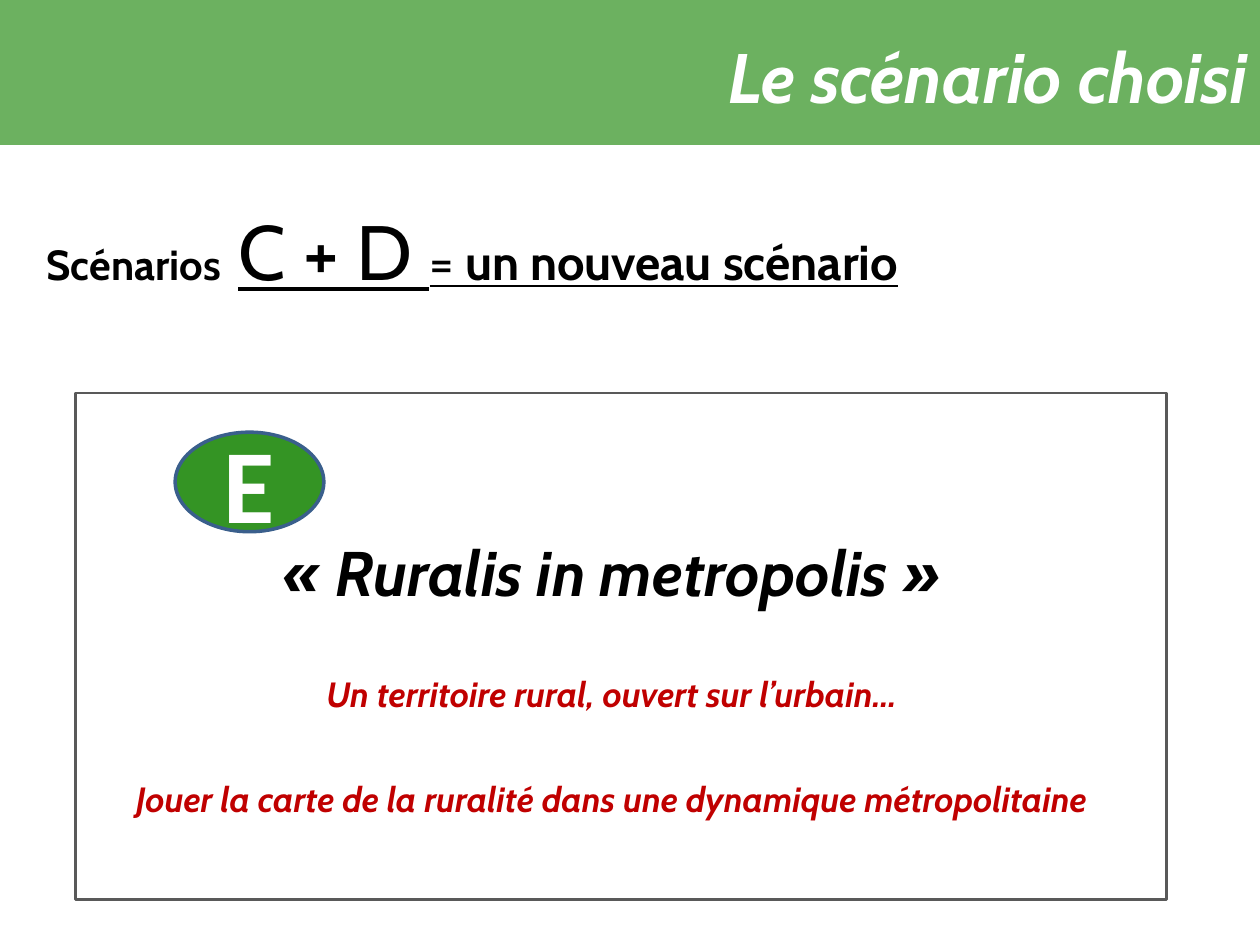
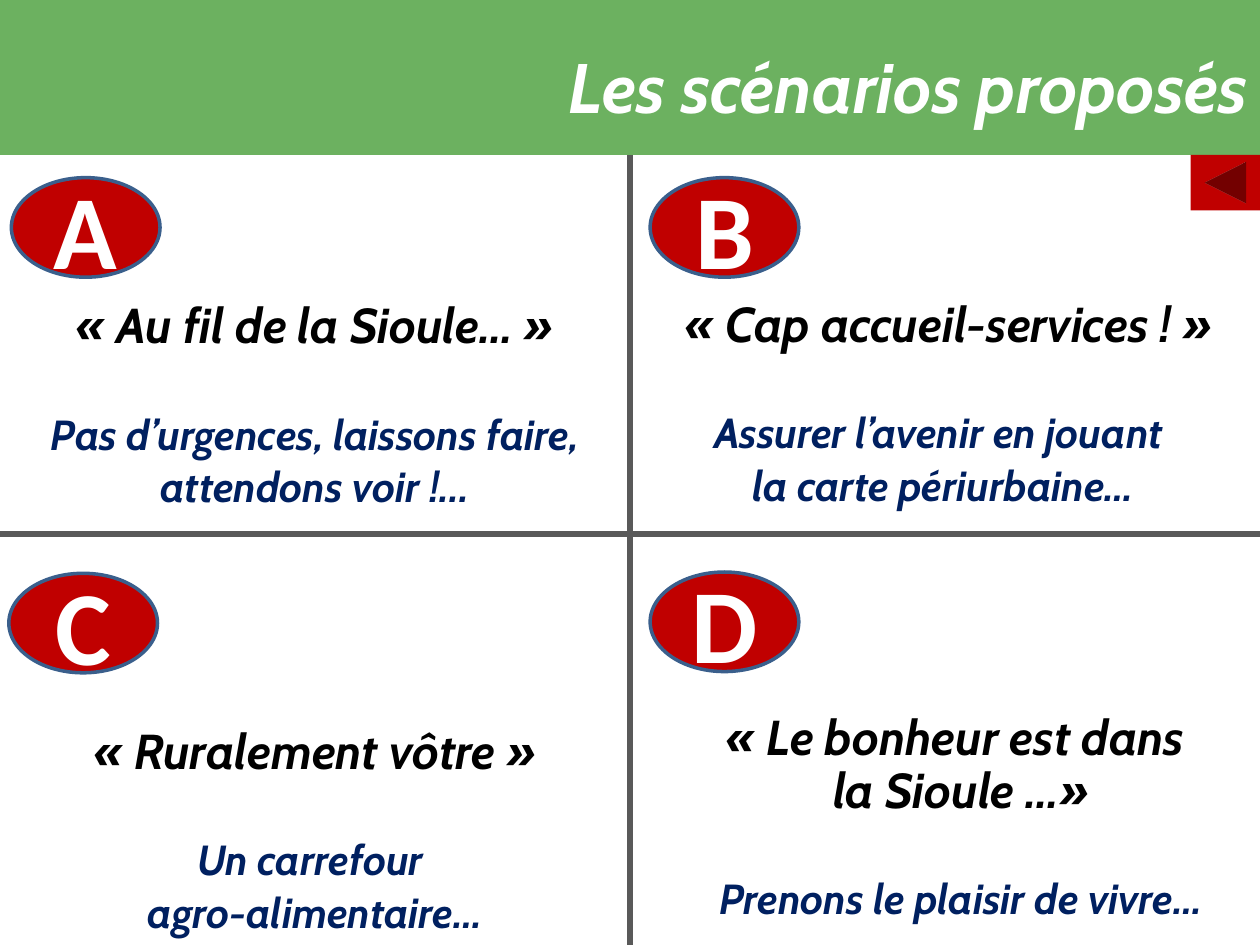
from dataclasses import dataclass
from typing import NamedTuple

from lxml import etree
from pptx import Presentation
from pptx import util as u
from pptx.dml.color import RGBColor
from pptx.enum import shapes, text
from pptx.oxml.ns import qn

COLOURS = {
    "green": "349424",
    "red": "C00000",
    "navy": "002060",
    "rim": "3A5F8C",
    "grey": "595959",
    "black": "000000",
    "white": "FFFFFF",
}
COLUMNS, ROWS = 100, 75
CELL = u.Inches(0.1)
BODY_LEADING = 30
BADGE_COLUMNS, BADGE_ROWS = 11.8, 7.9


class Area(NamedTuple):
    """A place on the grid, in columns and rows."""
    column: float
    row: float
    columns: float
    rows: float

    def emu(self) -> list[int]:
        return [round(length * CELL) for length in self]


@dataclass(frozen=True)
class Span:
    words: str
    size: float
    colour: str = "black"
    bold: bool = True
    italic: bool = True
    underline: bool = False
    name: str = "Cabin"


@dataclass(frozen=True)
class Para:
    spans: tuple[Span, ...]
    align: text.PP_ALIGN = text.PP_ALIGN.CENTER
    leading: float | None = BODY_LEADING
    before: float = 0


@dataclass(frozen=True)
class Scenario:
    letter: str
    badge_at: tuple[float, float]
    area: Area
    name: tuple[str, ...]
    motto: tuple[str, ...]


SCENARIOS = (
    Scenario("A", (0.9, 14.1), Area(0, 23.4, 50, 22),
             ("«\u00a0Au fil de la Sioule…\u00a0»",),
             ("Pas d’urgences, laissons faire, attendons voir !...",)),
    Scenario("B", (51.6, 14.1), Area(49.8, 23.3, 50.1, 22),
             (" «\u00a0Cap accueil-services !\u00a0»",),
             ("Assurer l’avenir en jouant ", "la carte périurbaine…")),
    Scenario("C", (0.7, 45.5), Area(0, 57.2, 50, 17.8),
             ("«\u00a0Ruralement vôtre »",),
             ("Un carrefour ", "agro-alimentaire…")),
    Scenario("D", (51.6, 45.4), Area(53, 56.1, 46.5, 18.9),
             ("«\u00a0Le bonheur est dans ", "la Sioule …»"),
             ("Prenons le plaisir de vivre…",)),
)


def rgb(colour: str) -> RGBColor:
    return RGBColor.from_string(COLOURS[colour])


def write(frame, paras: list[Para]) -> None:
    for index, item in enumerate(paras):
        para = frame.paragraphs[0] if index == 0 else frame.add_paragraph()
        para.alignment = item.align
        para.space_before = u.Pt(item.before)
        if item.leading:
            para.line_spacing = u.Pt(item.leading)
        for span in item.spans:
            run = para.add_run()
            run.text = span.words
            run.font.size = u.Pt(span.size)
            run.font.color.rgb = rgb(span.colour)
            for key in ("name", "bold", "italic", "underline"):
                setattr(run.font, key, getattr(span, key))


def add_text(page, area: Area, paras: list[Para]) -> None:
    box = page.shapes.add_textbox(*area.emu())
    box.text_frame.word_wrap = True
    write(box.text_frame, paras)


def add_panel(page, kind: shapes.MSO_SHAPE, area: Area, fill: str | None = None,
              line: str | None = None, width: float = 0):
    panel = page.shapes.add_shape(kind, *area.emu())
    panel.shadow.inherit = False
    if fill:
        panel.fill.solid()
        panel.fill.fore_color.rgb = rgb(fill)
    else:
        panel.fill.background()
    if line:
        panel.line.color.rgb = rgb(line)
        panel.line.width = u.Pt(width)
    else:
        panel.line.fill.background()
    return panel


def add_header(page, title: str, rows: float, leading: float | None = None) -> None:
    """Draw the translucent green band and the right-aligned title."""
    band = add_panel(page, shapes.MSO_SHAPE.RECTANGLE, Area(0, 0, COLUMNS, rows), "green")
    tint = band.fill._xPr.find(".//" + qn("a:srgbClr"))
    etree.SubElement(tint, qn("a:alpha"), val="72000")
    add_text(page, Area(-3.1, 3, 103.1, 19.5),
             [Para((Span(title, 40, "white"),), text.PP_ALIGN.RIGHT, leading)])


def add_badge(page, letter: str, column: float, row: float, fill: str) -> None:
    area = Area(column, row, BADGE_COLUMNS, BADGE_ROWS)
    badge = add_panel(page, shapes.MSO_SHAPE.OVAL, area, fill, "rim", 2)
    badge.text_frame.vertical_anchor = text.MSO_ANCHOR.MIDDLE
    span = Span(letter, 60, "white", italic=False, name="Calibri")
    write(badge.text_frame, [Para((span,), leading=None)])


def add_divider(page, start: tuple[float, float], end: tuple[float, float]) -> None:
    ends = [round(length * CELL) for length in (*start, *end)]
    divider = page.shapes.add_connector(shapes.MSO_CONNECTOR.STRAIGHT, *ends)
    divider.line.color.rgb = rgb("grey")
    divider.line.width = u.Pt(3.5)
    etree.SubElement(divider._element.spPr, qn("a:effectLst"))


def build_chosen(page) -> None:
    add_header(page, "Le scénario choisi", 11.5, 42)
    upright = {"italic": False}
    add_text(page, Area(2.7, 15.7, 81.1, 22.6), [Para((
        Span("Scénarios", 24, **upright),
        Span(" ", 44, bold=False, **upright),
        Span("C + D ", 44, bold=False, underline=True, **upright),
        Span("= ", 28, bold=False, underline=True, **upright),
        Span("un nouveau scénario", 28, underline=True, **upright),
    ), text.PP_ALIGN.LEFT, None)])
    mottos = ("Un territoire rural, ouvert sur l’urbain…",
              "Jouer la carte de la ruralité dans une dynamique métropolitaine")
    add_text(page, Area(6.8, 43.7, 83.5, 30.5), [
        Para((Span("«\u00a0Ruralis in metropolis »", 36),)),
        *(Para((Span(motto, 20, "red"),), before=BODY_LEADING) for motto in mottos),
    ])
    add_badge(page, "E", 13.9, 34.3, "green")
    add_panel(page, shapes.MSO_SHAPE.RECTANGLE, Area(6, 31.2, 86.6, 40.2),
              line="grey", width=1.5)


def build_proposed(page) -> None:
    band_rows, middle_row = 12.3, 42.4
    add_header(page, "Les scénarios proposés", band_rows)
    for scenario in SCENARIOS:
        names = [Para((Span(line, 28),)) for line in scenario.name]
        mottos = [Para((Span(line, 24, "navy"),), before=0 if index else BODY_LEADING)
                  for index, line in enumerate(scenario.motto)]
        add_text(page, scenario.area, names + mottos)
    add_divider(page, (COLUMNS / 2, band_rows), (COLUMNS / 2, ROWS))
    add_divider(page, (0, middle_row), (COLUMNS, middle_row))
    for scenario in SCENARIOS:
        add_badge(page, scenario.letter, *scenario.badge_at, "red")
    add_panel(page, shapes.MSO_SHAPE.ACTION_BUTTON_BACK_OR_PREVIOUS,
              Area(94.5, band_rows, 5.5, 4.4), "red")


def main() -> None:
    deck = Presentation()
    deck.slide_width, deck.slide_height = COLUMNS * CELL, ROWS * CELL
    for build in (build_chosen, build_proposed):
        build(deck.slides.add_slide(deck.slide_layouts[6]))
    deck.save("out.pptx")


if __name__ == "__main__":
    main()
